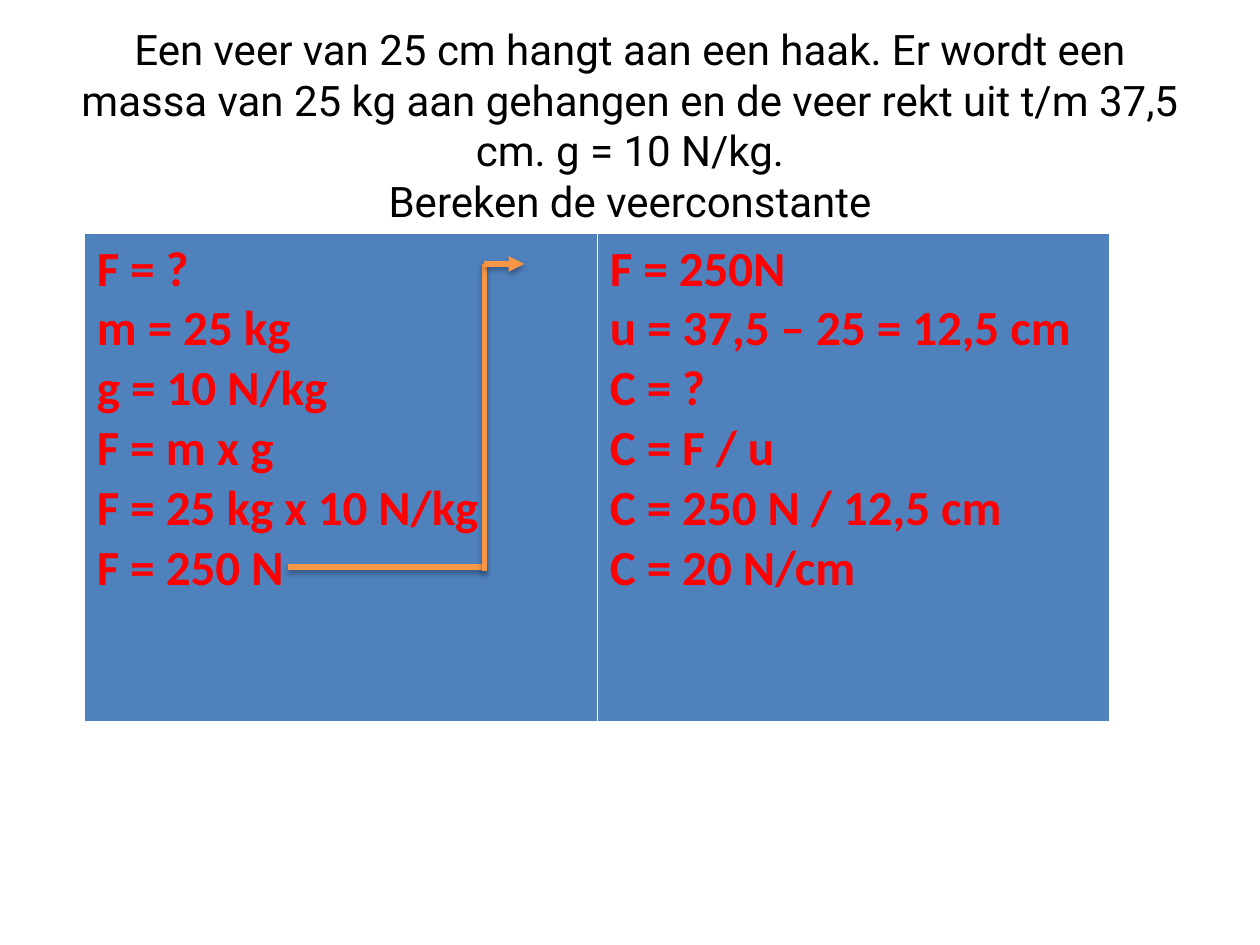
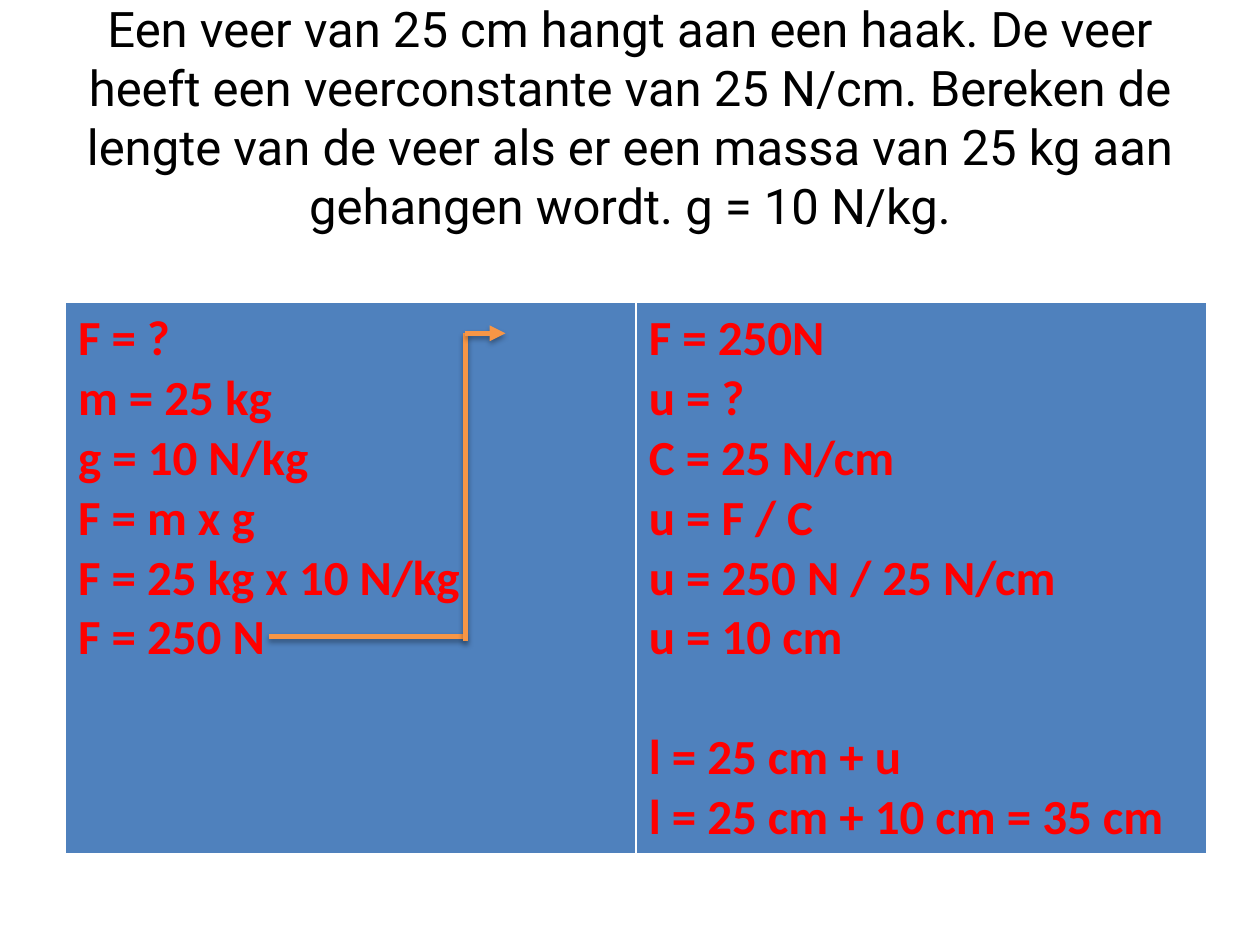
from dataclasses import dataclass

from lxml.etree import SubElement
from pptx import Presentation
from pptx.dml.color import RGBColor
from pptx.enum.shapes import MSO_CONNECTOR
from pptx.enum.text import MSO_ANCHOR, MSO_AUTO_SIZE, PP_ALIGN
from pptx.oxml.ns import qn
from pptx.util import Cm, Pt


@dataclass(frozen=True)
class Theme:
    title_font: str = "Roboto"
    work_font: str = "Calibri"
    title_color: RGBColor = RGBColor(0, 0, 0)
    work_color: RGBColor = RGBColor(0xFF, 0, 0)
    cell_fill: RGBColor = RGBColor(0x4F, 0x81, 0xBD)
    arrow_color: RGBColor = RGBColor(0xF7, 0x96, 0x46)
    long_title_size: Pt = Pt(24)
    title_size: Pt = Pt(28)
    work_size: Pt = Pt(28)
    section_gap: Pt = Pt(34.2)
    arrow_width: Pt = Pt(3)


THEME = Theme()

FORCE_STEPS = [
    "F = ?",
    "m = 25 kg",
    "g = 10 N/kg",
    "F = m x g",
    "F = 25 kg x 10 N/kg",
    "F = 250 N",
]
CONSTANT_STEPS = [
    "F = 250N",
    "u = 37,5 – 25 = 12,5 cm",
    "C = ?",
    "C = F / u",
    "C = 250 N / 12,5 cm",
    "C = 20 N/cm",
]
EXTENSION_STEPS = [
    "F = 250N",
    "u = ?",
    "C = 25 N/cm",
    "u = F / C",
    "u = 250 N / 25 N/cm",
    "u = 10 cm",
]
LENGTH_STEPS = ["l = 25 cm + u", "l = 25 cm + 10 cm = 35 cm"]


def style_font(font, name, size, color, bold=False):
    font.name = name
    font.size = size
    font.color.rgb = color
    font.bold = bold


def set_title(page, text, top, height, size):
    title = page.shapes.title
    title.left, title.top = Cm(1.27), Cm(top)
    title.width, title.height = Cm(22.86), Cm(height)
    frame = title.text_frame
    frame.text = text
    frame.word_wrap = True
    frame.auto_size = MSO_AUTO_SIZE.NONE
    frame.vertical_anchor = MSO_ANCHOR.MIDDLE
    for para in frame.paragraphs:
        para.alignment = PP_ALIGN.CENTER
        for span in para.runs:
            style_font(span.font, THEME.title_font, size, THEME.title_color)


def fill_cell(cell, sections):
    cell.fill.solid()
    cell.fill.fore_color.rgb = THEME.cell_fill
    frame = cell.text_frame
    frame.text = "\n".join(step for section in sections for step in section)
    for para in frame.paragraphs:
        for span in para.runs:
            style_font(span.font, THEME.work_font, THEME.work_size, THEME.work_color, True)
    section_start = 0
    for section in sections[:-1]:
        section_start += len(section)
        frame.paragraphs[section_start].space_before = THEME.section_gap


def add_work_table(page, left, top, width, height, columns):
    table = page.shapes.add_table(
        1, len(columns), Cm(left), Cm(top), Cm(width), Cm(height)
    ).table
    for cell, sections in zip(table.rows[0].cells, columns):
        fill_cell(cell, sections)


def add_shadow(properties):
    effects = SubElement(properties, qn("a:effectLst"))
    shadow = SubElement(
        effects,
        qn("a:outerShdw"),
        blurRad=str(Pt(3.1)),
        dist=str(Pt(1.8)),
        dir="5400000",
        rotWithShape="0",
    )
    color = SubElement(shadow, qn("a:srgbClr"), val="000000")
    SubElement(color, qn("a:alpha"), val="35000")


def add_line(page, start, end, arrowhead=False):
    line = page.shapes.add_connector(
        MSO_CONNECTOR.STRAIGHT, *(Cm(length) for length in (*start, *end))
    )
    line.line.color.rgb = THEME.arrow_color
    line.line.width = THEME.arrow_width
    if arrowhead:
        SubElement(line.line._get_or_add_ln(), qn("a:tailEnd"), type="triangle")
    add_shadow(line._element.spPr)


def add_result_arrow(page, table_left, table_top):
    start, bend, tip = (table_left + offset for offset in (4.1, 8.06, 8.87))
    upper, lower = table_top + 0.62, table_top + 6.73
    add_line(page, (start, lower), (bend, lower))
    add_line(page, (bend, upper), (bend, lower + 0.09))
    add_line(page, (bend, upper), (tip, upper), arrowhead=True)


def add_exercise(deck, title, table_area, columns):
    page = deck.slides.add_slide(deck.slide_layouts[5])
    set_title(page, *title)
    add_work_table(page, *table_area, columns)
    add_result_arrow(page, *table_area[:2])


def main():
    deck = Presentation()
    deck.slide_width, deck.slide_height = Cm(25.4), Cm(19.05)
    add_exercise(
        deck,
        (
            "Een veer van 25 cm hangt aan een haak. Er wordt een massa van 25 kg "
            "aan gehangen en de veer rekt uit t/m 37,5 cm. g = 10 N/kg.\v"
            "Bereken de veerconstante",
            0.33,
            4.37,
            THEME.long_title_size,
        ),
        (1.7, 4.7, 20.68, 9.84),
        [[FORCE_STEPS], [CONSTANT_STEPS]],
    )
    add_exercise(
        deck,
        (
            "Een veer van 25 cm hangt aan een haak. De veer heeft een "
            "veerconstante van 25 N/cm. Bereken de lengte van de veer als er "
            "een massa van 25 kg aan gehangen wordt. g = 10 N/kg.",
            0.76,
            3.18,
            THEME.title_size,
        ),
        (1.32, 6.1, 23.01, 11.07),
        [[FORCE_STEPS], [EXTENSION_STEPS, LENGTH_STEPS]],
    )
    deck.save("out.pptx")


if __name__ == "__main__":
    main()
